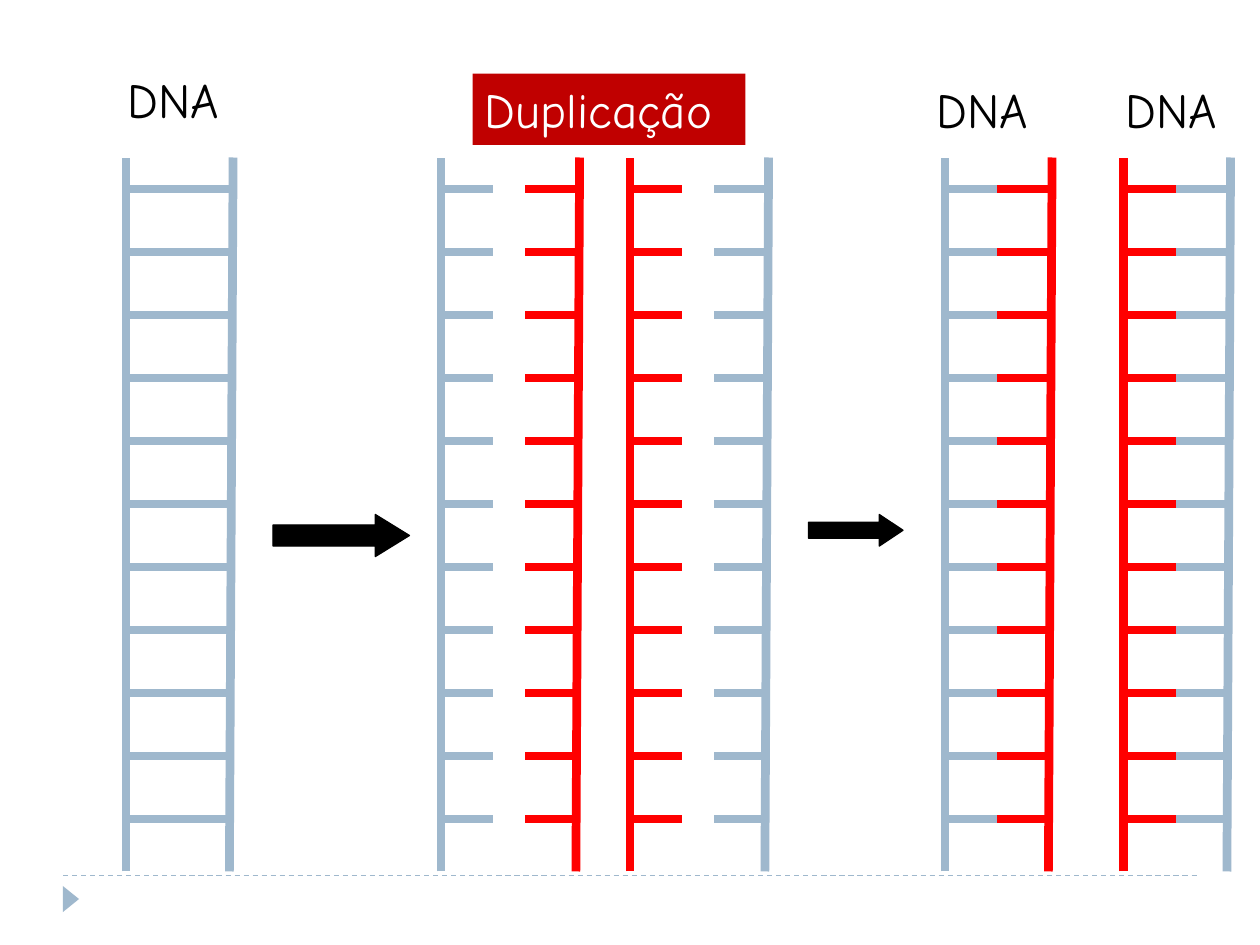
from dataclasses import dataclass

from lxml import etree
from pptx import Presentation
from pptx.dml.color import RGBColor
from pptx.enum.dml import MSO_LINE
from pptx.enum.shapes import MSO_CONNECTOR, MSO_SHAPE
from pptx.enum.text import MSO_ANCHOR, PP_ALIGN
from pptx.oxml.ns import qn
from pptx.shapes.autoshape import Shape
from pptx.shapes.connector import Connector
from pptx.slide import Slide
from pptx.util import Inches, Pt

STRAIGHT = MSO_CONNECTOR.STRAIGHT
RIGHT_ARROW = MSO_SHAPE.RIGHT_ARROW
TRIANGLE = MSO_SHAPE.ISOSCELES_TRIANGLE
RECTANGLE = MSO_SHAPE.RECTANGLE
DASH = MSO_LINE.DASH
LEFT = PP_ALIGN.LEFT
TOP = MSO_ANCHOR.TOP

BLUE = RGBColor(0x9F, 0xB8, 0xCD)
RED = RGBColor(0xFF, 0x00, 0x00)
DARK_RED = RGBColor(0xC0, 0x00, 0x00)
BLACK = RGBColor(0x00, 0x00, 0x00)
WHITE = RGBColor(0xFF, 0xFF, 0xFF)

FONT = "Comic Neue"
SLIDE_WIDTH, SLIDE_HEIGHT = Inches(10), Inches(7.5)
COLUMNS = 120
CELL = SLIDE_WIDTH / COLUMNS

STRAND_TOP, STRAND_BOTTOM = 15, 83
RUNG_ROWS = range(18, 79, 6)
RUNG_LENGTH = 5
STRAND_WEIGHT = 5
LEAN_TOP, LEAN_BOTTOM = 0.2, -0.15


@dataclass(frozen=True)
class Strand:
    column: float
    color: RGBColor
    faces_left: bool = False


@dataclass(frozen=True)
class Box:
    column: float
    row: float
    width: float
    height: float


@dataclass(frozen=True)
class Label:
    text: str
    box: Box
    color: RGBColor = BLACK
    fill: RGBColor | None = None


@dataclass(frozen=True)
class StepArrow:
    box: Box
    head: float


STRANDS = (
    Strand(12, BLUE),
    Strand(22, BLUE, faces_left=True),
    Strand(42, BLUE),
    Strand(55, RED, faces_left=True),
    Strand(60, RED),
    Strand(73, BLUE, faces_left=True),
    Strand(90, BLUE),
    Strand(100, RED, faces_left=True),
    Strand(107, RED),
    Strand(117, BLUE, faces_left=True),
)
STEP_ARROWS = (
    StepArrow(Box(26, 49, 13, 4), head=0.81),
    StepArrow(Box(77, 49, 9, 3), head=0.75),
)
LABELS = (
    Label("DNA", Box(11, 6, 14.6, 6.8)),
    Label("Duplicação", Box(45, 7, 26, 6.8), color=WHITE, fill=DARK_RED),
    Label("DNA", Box(88, 7, 14.6, 6.8)),
    Label("DNA", Box(106, 7, 13.6, 6.8)),
)


def cells(count: float) -> int:
    """Length of a number of grid cells."""
    return round(count * CELL)


def add_line(slide: Slide, start: tuple[float, float], end: tuple[float, float],
             color: RGBColor, weight: float) -> Connector:
    points = [cells(value) for value in (*start, *end)]
    line = slide.shapes.add_connector(STRAIGHT, *points)
    line.line.color.rgb = color
    line.line.width = Pt(weight)
    etree.SubElement(line._element.spPr, qn("a:effectLst"))
    return line


def add_box(slide: Slide, kind: MSO_SHAPE, box: Box, fill: RGBColor) -> Shape:
    shape = slide.shapes.add_shape(kind, cells(box.column), cells(box.row),
                                   cells(box.width), cells(box.height))
    shape.shadow.inherit = False
    shape.fill.solid()
    shape.fill.fore_color.rgb = fill
    shape.line.fill.background()
    return shape


def write_text(shape: Shape, text: str, *, color: RGBColor, size: float = 28) -> None:
    frame = shape.text_frame
    frame.word_wrap = True
    frame.vertical_anchor = TOP
    paragraph = frame.paragraphs[0]
    paragraph.alignment = LEFT
    run = paragraph.add_run()
    run.text = text
    run.font.name = FONT
    run.font.size = Pt(size)
    run.font.color.rgb = color


def draw_strand(slide: Slide, strand: Strand) -> None:
    """Backbone with its rungs; strands facing left lean slightly."""
    column = strand.column
    lean_top, lean_bottom = (LEAN_TOP, LEAN_BOTTOM) if strand.faces_left else (0, 0)
    rung_end = column + (-RUNG_LENGTH if strand.faces_left else RUNG_LENGTH)
    add_line(slide, (column + lean_bottom, STRAND_BOTTOM),
             (column + lean_top, STRAND_TOP), strand.color, STRAND_WEIGHT)
    for row in RUNG_ROWS:
        add_line(slide, (column, row), (rung_end, row), strand.color, STRAND_WEIGHT)


def draw_step_arrow(slide: Slide, arrow: StepArrow) -> None:
    shape = add_box(slide, RIGHT_ARROW, arrow.box, BLACK)
    shape.adjustments[1] = arrow.head
    shape.line.color.rgb = BLACK
    shape.line.width = Pt(0.75)


def draw_label(slide: Slide, label: Label) -> None:
    box = label.box
    if label.fill is None:
        shape = slide.shapes.add_textbox(cells(box.column), cells(box.row),
                                         cells(box.width), cells(box.height))
    else:
        shape = add_box(slide, RECTANGLE, box, label.fill)
    write_text(shape, label.text, color=label.color)


def draw_footer(slide: Slide) -> None:
    rule = add_line(slide, (6, 83.4), (114, 83.4), BLUE, 0.75)
    rule.line.dash_style = DASH
    marker = add_box(slide, TRIANGLE, Box(5.5, 84.85, 2.5, 1.55), BLUE)
    marker.rotation = 90


def main() -> None:
    presentation = Presentation()
    presentation.slide_width, presentation.slide_height = SLIDE_WIDTH, SLIDE_HEIGHT
    slide = presentation.slides.add_slide(presentation.slide_layouts[6])
    draw_footer(slide)
    for strand in STRANDS:
        draw_strand(slide, strand)
    for arrow in STEP_ARROWS:
        draw_step_arrow(slide, arrow)
    for label in LABELS:
        draw_label(slide, label)
    presentation.save("out.pptx")


if __name__ == "__main__":
    main()
